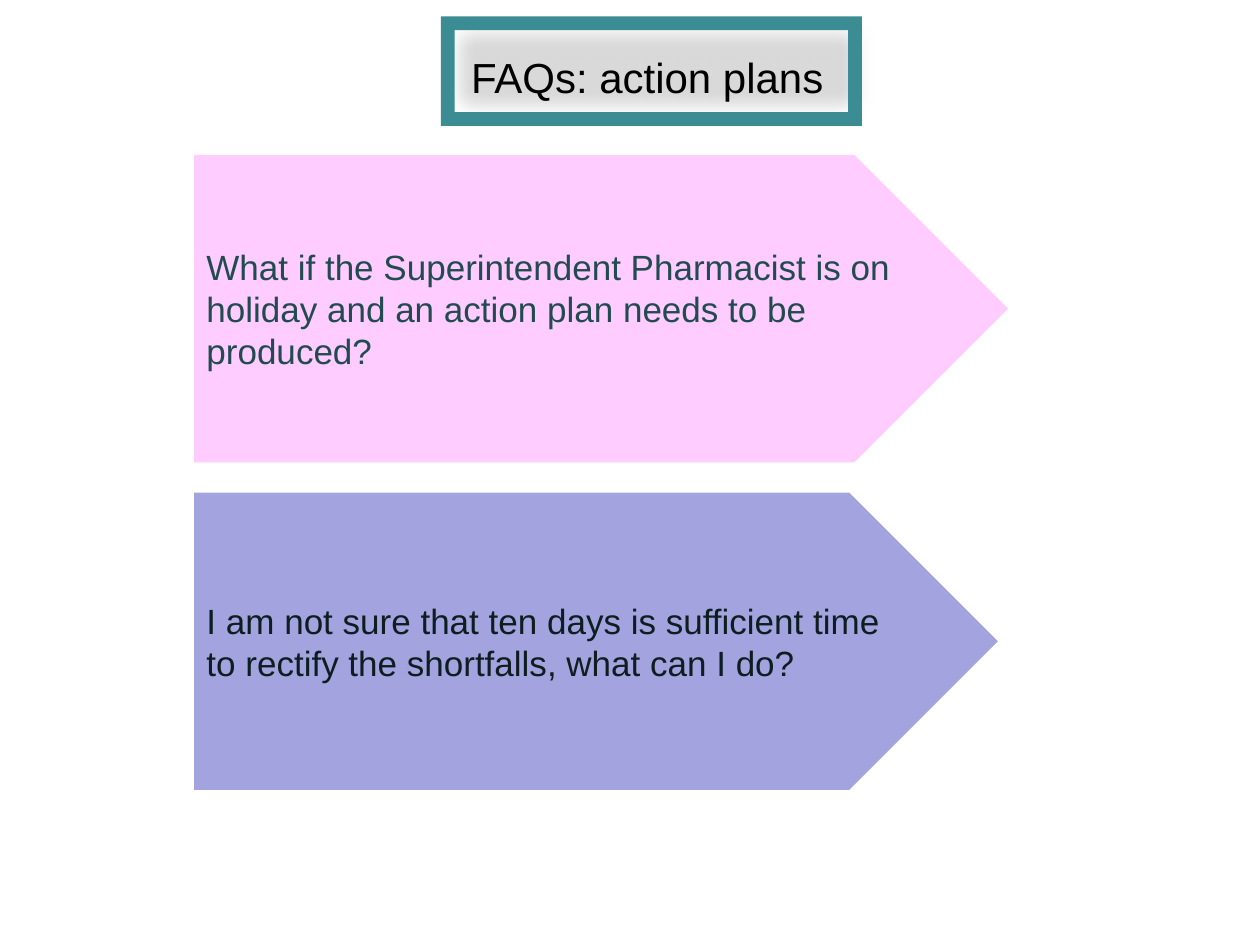
from dataclasses import dataclass

from lxml.etree import SubElement
from pptx import Presentation
from pptx.dml.color import RGBColor
from pptx.enum.shapes import MSO_SHAPE
from pptx.enum.text import MSO_ANCHOR, PP_ALIGN
from pptx.oxml.ns import qn
from pptx.shapes.autoshape import Shape
from pptx.slide import Slide
from pptx.text.text import TextFrame
from pptx.util import Inches, Pt


@dataclass
class Question:
    """A question shown in a pentagon arrow."""

    text: str
    top: float
    width: float
    height: float
    fill: str
    color: str


QUESTIONS = [
    Question(
        "What if the Superintendent Pharmacist is on holiday "
        "and an action plan needs to be produced?",
        1.23, 6.46, 2.44, "FFCCFF", "224B50",
    ),
    Question(
        "I am not sure that ten days is sufficient time "
        "to rectify the shortfalls, what can I do?",
        3.91, 6.38, 2.36, "A3A3E0", "0E1E20",
    ),
]
QUESTION_LEFT = 1.54


def hex_color(value: str) -> RGBColor:
    """Turn a hex string into a colour."""
    return RGBColor.from_string(value)


def add_filled_shape(slide: Slide, kind: MSO_SHAPE, left: float, top: float,
                     width: float, height: float, fill: str) -> Shape:
    """Add a flat preset shape without an outline."""
    shape = slide.shapes.add_shape(
        kind, Inches(left), Inches(top), Inches(width), Inches(height))
    shape.shadow.inherit = False
    shape.fill.solid()
    shape.fill.fore_color.rgb = hex_color(fill)
    shape.line.fill.background()
    return shape


def soften_edges(shape: Shape, radius: float) -> None:
    """Fade the edges of a shape over a radius in points."""
    effects = shape.element.spPr.find(qn("a:effectLst"))
    SubElement(effects, qn("a:softEdge"), rad=str(Pt(radius)))


def write_text(frame: TextFrame, text: str, size: float, color: str) -> None:
    """Write one left-aligned run of Arial text that wraps."""
    frame.word_wrap = True
    paragraph = frame.paragraphs[0]
    paragraph.alignment = PP_ALIGN.LEFT
    run = paragraph.add_run()
    run.text = text
    run.font.name = "Arial"
    run.font.size = Pt(size)
    run.font.color.rgb = hex_color(color)


def add_title(slide: Slide) -> None:
    """Add the framed title."""
    panel = add_filled_shape(slide, MSO_SHAPE.RECTANGLE, 3.43, 0.05, 3.58, 1, "D9D9D9")
    soften_edges(panel, 12.5)
    add_filled_shape(slide, MSO_SHAPE.FRAME, 3.5, 0.13, 3.34, 0.87, "3C8C93")
    title = slide.shapes.add_textbox(Inches(3.64), Inches(0.36), Inches(3.31), Inches(0.5))
    write_text(title.text_frame, "FAQs: action plans", 24, "000000")


def add_question(slide: Slide, question: Question) -> None:
    """Add one question arrow."""
    arrow = add_filled_shape(slide, MSO_SHAPE.PENTAGON, QUESTION_LEFT, question.top,
                             question.width, question.height, question.fill)
    arrow.text_frame.vertical_anchor = MSO_ANCHOR.MIDDLE
    write_text(arrow.text_frame, question.text, 20, question.color)


def main() -> None:
    """Build and save the slide."""
    presentation = Presentation()
    presentation.slide_width = Inches(10)
    presentation.slide_height = Inches(7.5)
    slide = presentation.slides.add_slide(presentation.slide_layouts[6])
    add_title(slide)
    for question in QUESTIONS:
        add_question(slide, question)
    presentation.save("out.pptx")


if __name__ == "__main__":
    main()
